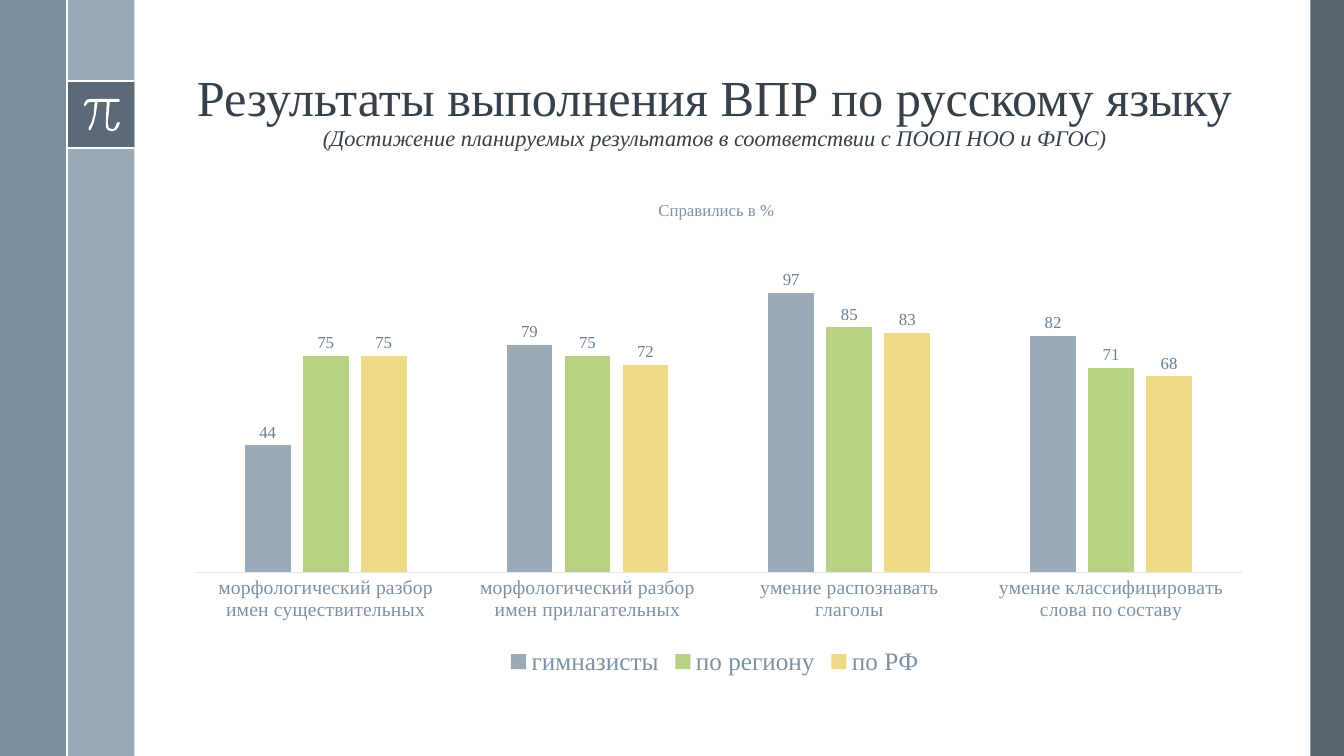
from lxml import etree
from pptx import Presentation
from pptx.chart.data import CategoryChartData
from pptx.dml.color import RGBColor
from pptx.enum import chart as ch, shapes, text
from pptx.oxml.ns import qn
from pptx.util import Pt

SLIDE_W, SLIDE_H = 960, 540
BAND = 48
BADGE_TOP = 58
CONTENT_LEFT, CONTENT_W = 125.28, 770.4
FONT = "Times New Roman"

WHITE = RGBColor(0xFF, 0xFF, 0xFF)
SLATE = RGBColor(0x47, 0x55, 0x62)
STEEL = RGBColor(0x6A, 0x80, 0x93)
MIST = RGBColor(0x9B, 0xAA, 0xB7)
GREEN = RGBColor(0xB8, 0xD0, 0x82)
YELLOW = RGBColor(0xEF, 0xDB, 0x85)
TITLE_INK = RGBColor(0x35, 0x40, 0x4A)
AXIS_INK = RGBColor(0x7D, 0x91, 0xA2)
LABEL_INK = RGBColor(0x6A, 0x80, 0x94)
AXIS_LINE = RGBColor(0xE1, 0xE6, 0xEA)

# Outline of the pi sign in hundredths of an inch (0.72 pt)
PI_UNIT = 0.72
PI_OUTLINE = [
    (118, 98), (90, 98), (86, 99), (84, 102), (83, 104), (84, 105), (85, 105),
    (87, 102), (90, 101), (94, 101), (93, 114), (91, 121), (88, 127), (88, 129),
    (89, 129), (90, 129), (93, 122), (95, 114), (97, 101), (106, 101),
    (105, 122), (105, 126), (107, 129), (110, 130), (112, 130), (115, 129),
    (117.4, 126), (119, 122), (118, 121), (116, 122), (115, 125), (113, 128),
    (111, 128), (108, 127), (107, 122), (109, 101), (118, 101), (119, 100),
]

SKILLS = [
    "морфологический разбор имен существительных",
    "морфологический разбор имен прилагательных",
    "умение распознавать глаголы",
    "умение классифицировать слова по составу",
]
RESULTS = [
    ("гимназисты", (44, 79, 97, 82), MIST),
    ("по региону", (75, 75, 85, 71), GREEN),
    ("по РФ", (75, 72, 83, 68), YELLOW),
]


def paint(shape, color, opacity=100):
    shape.shadow.inherit = False
    shape.fill.solid()
    shape.fill.fore_color.rgb = color
    shape.line.fill.background()
    if opacity < 100:
        srgb = shape.fill._xPr.find(".//" + qn("a:srgbClr"))
        etree.SubElement(srgb, qn("a:alpha"), val=str(opacity * 1000))


def add_band(slide, left, top, width, height, color, opacity=100):
    band = slide.shapes.add_shape(
        shapes.MSO_SHAPE.RECTANGLE, Pt(left), Pt(top), Pt(width), Pt(height))
    paint(band, color, opacity)


def add_rule(slide, x1, y1, x2, y2):
    rule = slide.shapes.add_connector(
        shapes.MSO_CONNECTOR.STRAIGHT, Pt(x1), Pt(y1), Pt(x2), Pt(y2))
    rule.line.color.rgb = WHITE
    rule.line.width = Pt(1.5)
    etree.SubElement(rule._element.spPr, qn("a:effectLst"))


def add_pi_sign(slide):
    start, *rest = [(Pt(x * PI_UNIT), Pt(y * PI_UNIT)) for x, y in PI_OUTLINE]
    outline = slide.shapes.build_freeform(*start)
    outline.add_line_segments(rest, close=True)
    paint(outline.convert_to_shape(), WHITE)


def add_side_decor(slide):
    add_band(slide, 936, 0, 24, SLIDE_H, SLATE, 90)
    add_band(slide, BAND, 0, BAND, SLIDE_H, MIST)
    add_band(slide, 0, 0, BAND, SLIDE_H, STEEL, 88)
    add_band(slide, BAND, BADGE_TOP, BAND, BAND, SLATE, 75)
    for y in (BADGE_TOP, BADGE_TOP + BAND):
        add_rule(slide, BAND, y, 2 * BAND, y)
    add_pi_sign(slide)
    add_rule(slide, BAND, 0, BAND, SLIDE_H)


def fill_title(slide, heading, subtitle):
    title = slide.shapes.title
    title.left, title.top = Pt(CONTENT_LEFT), Pt(13.7)
    title.width, title.height = Pt(CONTENT_W), Pt(97.9)
    frame = title.text_frame
    frame.auto_size = text.MSO_AUTO_SIZE.NONE
    frame.vertical_anchor = text.MSO_ANCHOR.BOTTOM
    line = frame.paragraphs[0]
    line.alignment = text.PP_ALIGN.CENTER
    line.line_spacing = 0.9
    set_font(line.font, 36, TITLE_INK)
    line.add_run().text = heading
    line.add_line_break()
    note = line.add_run()
    note.text = subtitle
    note.font.size = Pt(16)
    note.font.italic = True


def set_font(font, size, color):
    font.name = FONT
    font.size = Pt(size)
    font.color.rgb = color
    font.bold = False


def place(element, **edges):
    """Give a chart part a manual layout in fractions of the chart."""
    for old in element.findall(qn("c:layout")):
        element.remove(old)
    layout = etree.Element(qn("c:layout"))
    element.insert(0 if element.find(qn("c:tx")) is None else 1, layout)
    manual = etree.SubElement(layout, qn("c:manualLayout"))
    if "w" in edges:
        etree.SubElement(manual, qn("c:layoutTarget"), val="inner")
    for edge in "xy":
        etree.SubElement(manual, qn(f"c:{edge}Mode"), val="edge")
    for edge, share in edges.items():
        etree.SubElement(manual, qn(f"c:{edge}"), val=str(share))


def add_results_chart(slide):
    data = CategoryChartData()
    data.categories = SKILLS
    for name, values, _ in RESULTS:
        data.add_series(name, values)
    chart = slide.shapes.add_chart(
        ch.XL_CHART_TYPE.COLUMN_CLUSTERED, Pt(CONTENT_LEFT), Pt(126),
        Pt(CONTENT_W), Pt(360), data).chart
    set_font(chart.font, 10, SLATE)

    chart.has_title = True
    caption = chart.chart_title.text_frame
    caption.text = "Справились в %"
    set_font(caption.paragraphs[0].font, 12, AXIS_INK)
    place(chart.chart_title._element, x=0.445, y=0.04)
    place(chart._chartSpace.chart.plotArea, x=0.018, y=0.099, w=0.971, h=0.687)

    chart.has_legend = True
    chart.legend.position = ch.XL_LEGEND_POSITION.BOTTOM
    chart.legend.include_in_layout = False
    set_font(chart.legend.font, 18, AXIS_INK)

    skills = chart.category_axis
    skills.major_tick_mark = ch.XL_TICK_MARK.NONE
    skills.format.line.color.rgb = AXIS_LINE
    skills.format.line.width = Pt(0.75)
    set_font(skills.tick_labels.font, 14, AXIS_INK)
    percent = chart.value_axis
    percent.minimum_scale, percent.maximum_scale = 0, 120
    percent.has_major_gridlines = False
    percent.visible = False

    plot = chart.plots[0]
    plot.gap_width, plot.overlap = 219, -27
    plot.vary_by_categories = False
    for series, (_, _, color) in zip(plot.series, RESULTS):
        series.format.fill.solid()
        series.format.fill.fore_color.rgb = color
        labels = series.data_labels
        labels.show_value = True
        labels.position = ch.XL_LABEL_POSITION.OUTSIDE_END
        set_font(labels.font, 12, LABEL_INK)


def main():
    deck = Presentation()
    deck.slide_width, deck.slide_height = Pt(SLIDE_W), Pt(SLIDE_H)
    slide = deck.slides.add_slide(deck.slide_layouts.get_by_name("Title Only"))
    add_side_decor(slide)
    fill_title(
        slide, "Результаты выполнения ВПР по русскому языку",
        "(Достижение планируемых результатов в соответствии с ПООП НОО и ФГОС)")
    add_results_chart(slide)
    deck.save("out.pptx")


if __name__ == "__main__":
    main()
